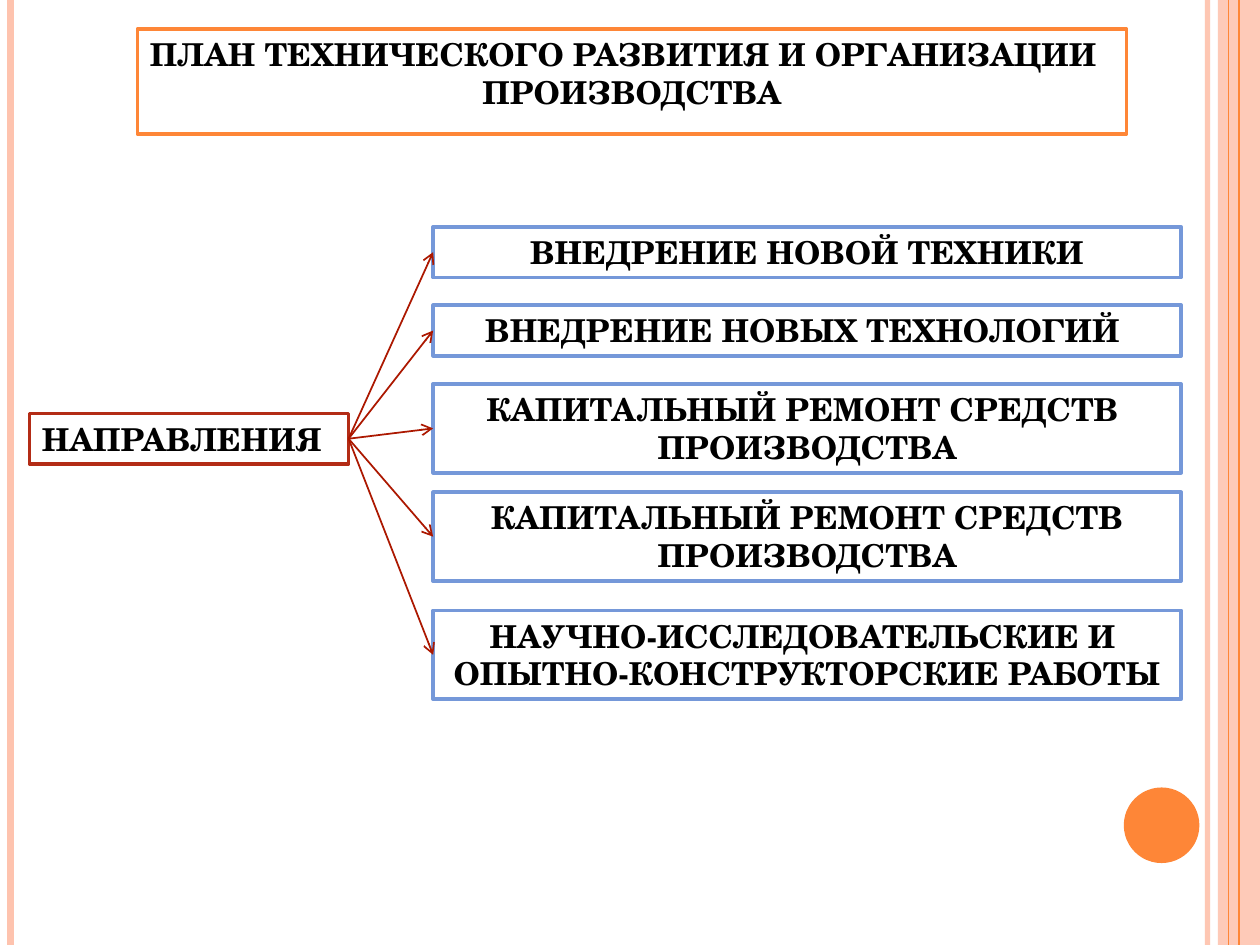
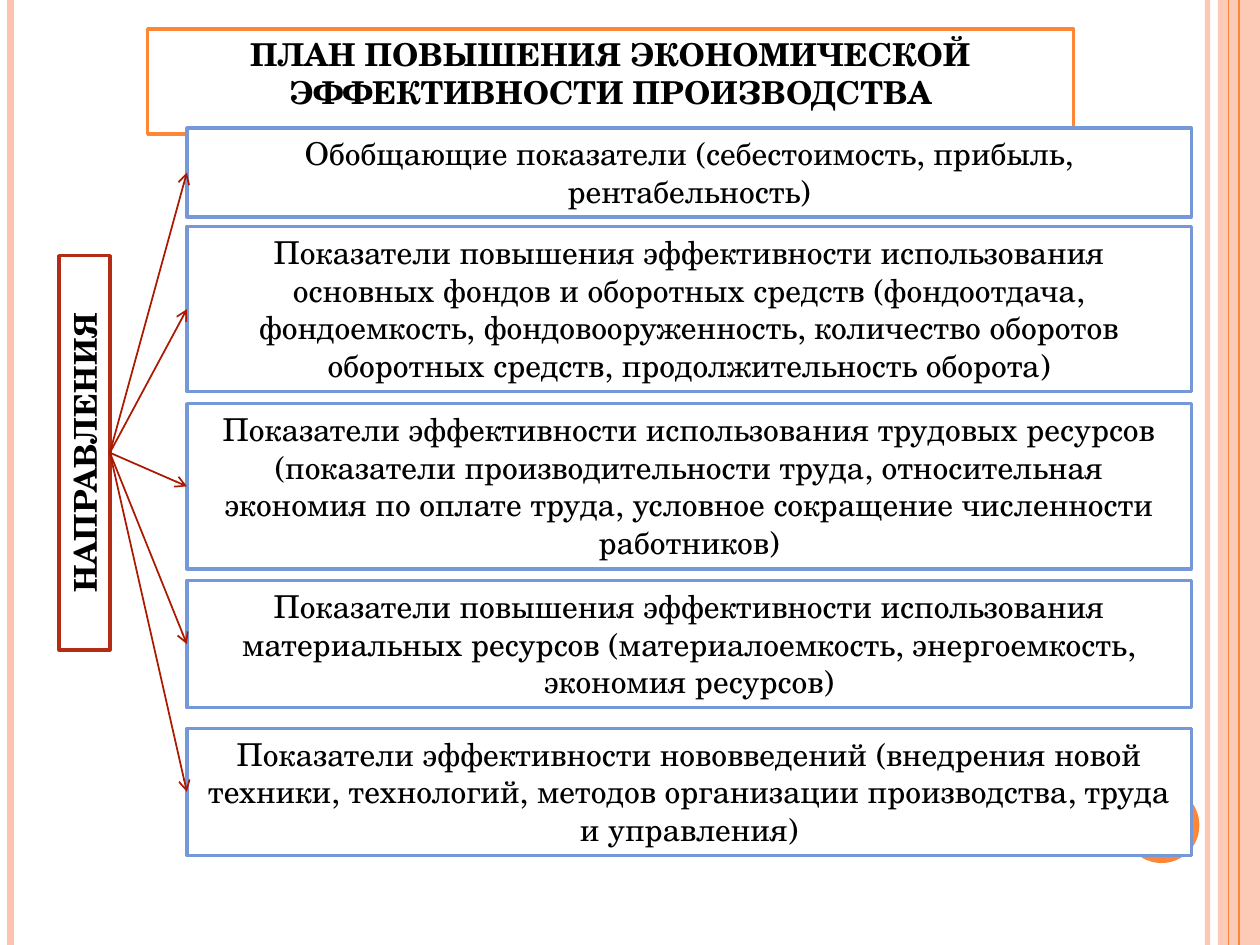
from dataclasses import dataclass

from lxml import etree
from pptx import Presentation
from pptx.dml.color import RGBColor
from pptx.enum.shapes import MSO_CONNECTOR, MSO_SHAPE
from pptx.enum.text import MSO_ANCHOR, MSO_AUTO_SIZE, PP_ALIGN
from pptx.oxml.ns import qn
from pptx.util import Pt

RECTANGLE, ELLIPSE = MSO_SHAPE.RECTANGLE, MSO_SHAPE.OVAL
STRAIGHT = MSO_CONNECTOR.STRAIGHT
LEFT, CENTER = PP_ALIGN.LEFT, PP_ALIGN.CENTER
TITLE_ONLY = 5
LEFT_SITE, BOTTOM_SITE, RIGHT_SITE = 1, 2, 3


@dataclass(frozen=True)
class Theme:
    font: str = "TeX Gyre Schola"
    text_size: float = 18
    line_height: float = 21.8
    padding: float = 7.2
    text: str = "000000"
    paper: str = "FFFFFF"
    accent: str = "FE8637"
    pale: str = "FEC3AE"
    hub: str = "B32C16"
    item: str = "7598D9"
    arrow: str = "AC1800"
    border: float = 2
    arrow_width: float = 1


THEME = Theme()
SLIDE_WIDTH, SLIDE_HEIGHT = 720, 540
TITLE_TOP = 16.6

# Vertical rules: x, colour, width, opacity in percent
RULES = [
    (690, THEME.pale, 3, 93),
    (6, THEME.pale, 4.5, 100),
    (708, THEME.accent, 1.5, 100),
    (702, THEME.accent, 0.75, 100),
]

DEVELOPMENT_ITEMS = [
    (129.6, 1, ["ВНЕДРЕНИЕ НОВОЙ ТЕХНИКИ"]),
    (174.4, 1, ["ВНЕДРЕНИЕ НОВЫХ ТЕХНОЛОГИЙ "]),
    (219.4, 2, ["КАПИТАЛЬНЫЙ РЕМОНТ СРЕДСТВ ", "ПРОИЗВОДСТВА"]),
    (281.3, 2, ["КАПИТАЛЬНЫЙ РЕМОНТ СРЕДСТВ ПРОИЗВОДСТВА"]),
    (348.8, 2, ["НАУЧНО-ИССЛЕДОВАТЕЛЬСКИЕ И ", "ОПЫТНО-КОНСТРУКТОРСКИЕ РАБОТЫ"]),
]

EFFICIENCY_ITEMS = [
    (73.2, 2, ["Обобщающие показатели (себестоимость, прибыль, рентабельность)"]),
    (129.5, 4, ["Показатели повышения эффективности использования основных фондов "
                "и оборотных средств (фондоотдача, фондоемкость, "
                "фондовооруженность, количество оборотов оборотных средств, "
                "продолжительность оборота)"]),
    (230.7, 4, ["Показатели эффективности использования трудовых ресурсов "
                "(показатели производительности труда, относительная экономия "
                "по оплате труда, условное сокращение численности работников)"]),
    (331.8, 3, ["Показатели повышения эффективности использования материальных "
                "ресурсов (материалоемкость, энергоемкость, экономия ресурсов)"]),
    (416.2, 3, ["Показатели эффективности нововведений (внедрения новой техники, "
                "технологий, методов организации производства, труда и управления)"]),
]


def set_attributes(target, values):
    for name, value in values.items():
        setattr(target, name, value)


def box_height(lines):
    return THEME.padding + THEME.line_height * lines


def paint(fill, color, opacity=100):
    fill.solid()
    fill.fore_color.rgb = RGBColor.from_string(color)
    if opacity < 100:
        for color_element in fill._xPr.iter(qn("a:srgbClr")):
            etree.SubElement(color_element, qn("a:alpha"), val=str(opacity * 1000))


def place(shape, left, top, width, height):
    set_attributes(shape, {"left": Pt(left), "top": Pt(top),
                           "width": Pt(width), "height": Pt(height)})


def write(shape, paragraphs, bold, alignments):
    frame = shape.text_frame
    set_attributes(frame, {
        "word_wrap": True, "vertical_anchor": MSO_ANCHOR.TOP,
        "margin_left": Pt(7.2), "margin_right": Pt(7.2),
        "margin_top": Pt(3.6), "margin_bottom": Pt(3.6),
    })
    frame.text = "\n".join(paragraphs)
    frame.auto_size = MSO_AUTO_SIZE.SHAPE_TO_FIT_TEXT
    for paragraph, alignment in zip(frame.paragraphs, alignments):
        paragraph.alignment = alignment
        font = paragraph.runs[0].font
        set_attributes(font, {"name": THEME.font, "size": Pt(THEME.text_size),
                              "bold": bold})
        font.color.rgb = RGBColor.from_string(THEME.text)


def frame_text(shape, paragraphs, border, bold=True, alignments=(CENTER, CENTER)):
    """Give a shape the white bordered look and its text."""
    paint(shape.fill, THEME.paper)
    paint(shape.line.fill, border)
    shape.line.width = Pt(THEME.border)
    write(shape, paragraphs, bold, alignments)


def add_plain_shape(slide, kind, left, top, width, height):
    shape = slide.shapes.add_shape(kind, Pt(left), Pt(top), Pt(width), Pt(height))
    shape.shadow.inherit = False
    return shape


def add_line(slide, start, end, color, width, opacity=100):
    line = slide.shapes.add_connector(STRAIGHT, *(Pt(value) for value in start + end))
    paint(line.line.fill, color, opacity)
    line.line.width = Pt(width)
    etree.SubElement(line.element.spPr, qn("a:effectLst"))
    return line


def add_arrow(slide, hub, hub_site, start, target):
    end = (target.left.pt, target.top.pt + target.height.pt / 2)
    arrow = add_line(slide, start, end, THEME.arrow, THEME.arrow_width)
    etree.SubElement(arrow.line._get_or_add_ln(), qn("a:tailEnd"), type="arrow")
    arrow.end_connect(target, LEFT_SITE)
    arrow.begin_connect(hub, hub_site)
    # A rotated hub needs its visible edge as the starting point
    set_attributes(arrow, {"begin_x": Pt(start[0]), "begin_y": Pt(start[1])})


def add_title(slide, left, width, paragraphs, alignments):
    title = slide.shapes.title
    place(title, left, TITLE_TOP, width, box_height(2))
    frame_text(title, paragraphs, THEME.accent, alignments=alignments)


def add_hub(slide, left, top, width, alignment, rotation=0):
    hub = add_plain_shape(slide, RECTANGLE, left, top, width, box_height(1))
    hub.rotation = rotation
    frame_text(hub, ["НАПРАВЛЕНИЯ"], THEME.hub, alignments=[alignment])
    return hub


def add_items(slide, hub, hub_site, left, width, items, bold):
    """Stack the item boxes and fan arrows out to them from the hub."""
    reach = hub.height if hub.rotation else hub.width
    start = ((hub.left + hub.width / 2 + reach / 2) / Pt(1),
             (hub.top + hub.height / 2) / Pt(1))
    for top, lines, paragraphs in items:
        item = add_plain_shape(slide, RECTANGLE, left, top, width, box_height(lines))
        frame_text(item, paragraphs, THEME.item, bold)
        add_arrow(slide, hub, hub_site, start, item)


def decorate_layout(presentation, layout):
    """Draw the shared side bands and circle, then hand them to the layout."""
    for placeholder in list(layout.placeholders):
        if placeholder.placeholder_format.idx != 0:
            placeholder.element.getparent().remove(placeholder.element)
    slide = presentation.slides.add_slide(layout)
    band = add_plain_shape(slide, RECTANGLE, 696, 0, 24, SLIDE_HEIGHT)
    paint(band.fill, THEME.pale, 87)
    circle = add_plain_shape(slide, ELLIPSE, 642.2, 450, 43.2, 43.2)
    paint(circle.fill, THEME.accent)
    for shape in (band, circle):
        shape.line.fill.background()
    rules = [add_line(slide, (x, 0), (x, SLIDE_HEIGHT), color, width, opacity)
             for x, color, width, opacity in RULES]
    for shape in [band, circle, *rules]:
        layout.shapes.element.append(shape.element)
    return slide


def build_development_slide(slide):
    add_title(slide, 78.5, 565.2,
              ["ПЛАН ТЕХНИЧЕСКОГО РАЗВИТИЯ И ОРГАНИЗАЦИИ", "ПРОИЗВОДСТВА"],
              [LEFT, CENTER])
    hub = add_hub(slide, 16.8, 236.2, 182.4, LEFT)
    add_items(slide, hub, RIGHT_SITE, 247.5, 427.5, DEVELOPMENT_ITEMS, bold=True)


def build_efficiency_slide(slide):
    add_title(slide, 84.4, 529,
              ["ПЛАН ПОВЫШЕНИЯ ЭКОНОМИЧЕСКОЙ ЭФФЕКТИВНОСТИ ПРОИЗВОДСТВА"],
              [CENTER])
    hub = add_hub(slide, -64.3, 244.2, 225.2, CENTER, rotation=270)
    add_items(slide, hub, BOTTOM_SITE, 106.8, 574, EFFICIENCY_ITEMS, bold=False)


def main():
    presentation = Presentation()
    set_attributes(presentation, {"slide_width": Pt(SLIDE_WIDTH),
                                  "slide_height": Pt(SLIDE_HEIGHT)})
    layout = presentation.slide_layouts[TITLE_ONLY]
    build_development_slide(decorate_layout(presentation, layout))
    build_efficiency_slide(presentation.slides.add_slide(layout))
    presentation.save("out.pptx")


if __name__ == "__main__":
    main()
